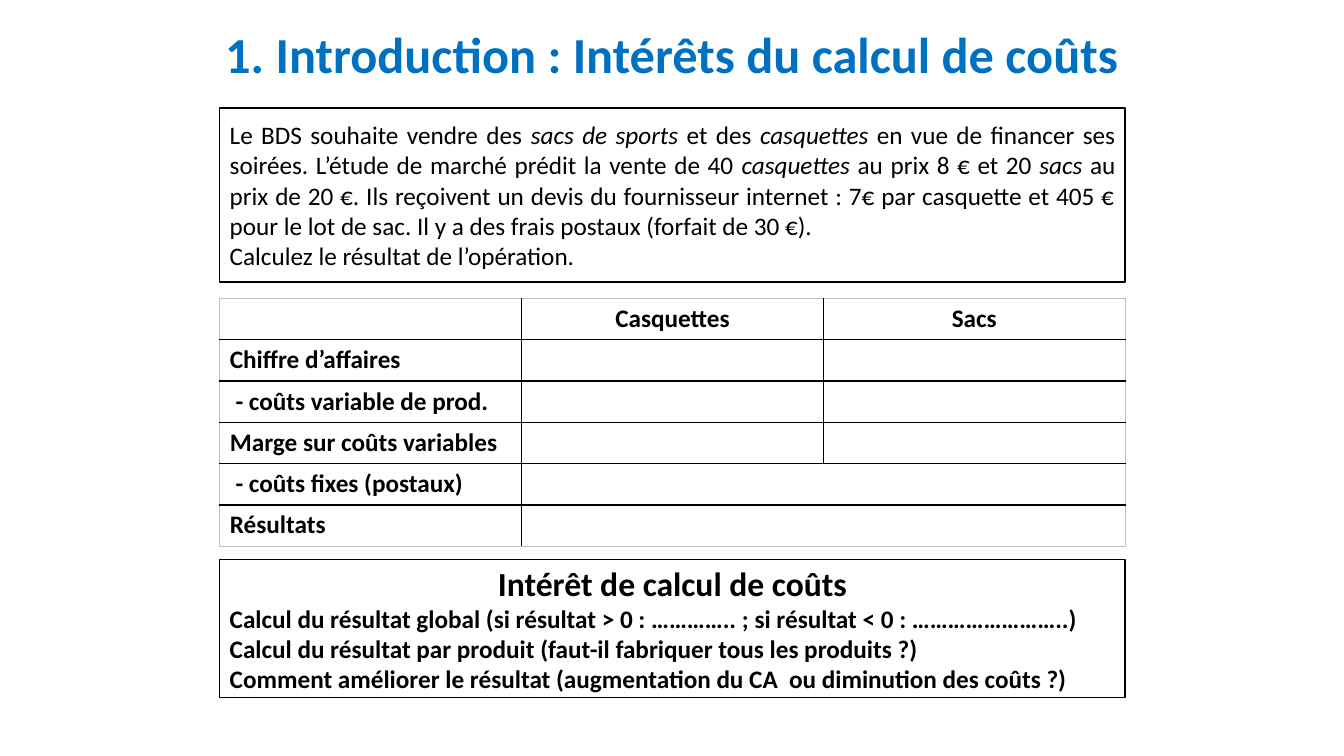
from lxml.etree import SubElement
from pptx import Presentation
from pptx.dml.color import RGBColor
from pptx.enum.shapes import MSO_SHAPE
from pptx.enum.text import MSO_ANCHOR, PP_ALIGN
from pptx.oxml.ns import qn
from pptx.util import Inches, Pt

BLACK = RGBColor(0, 0, 0)
WHITE = RGBColor(255, 255, 255)
BLUE = RGBColor(0, 0x70, 0xC0)
GREY = RGBColor(0xBF, 0xBF, 0xBF)
LEFT, WIDTH = Inches(2.18), Inches(8.98)
ROW_HEIGHT = Inches(0.41)


def write_spans(para, spans, size, bold=False, align=PP_ALIGN.LEFT, color=BLACK):
    para.alignment = align
    for position, words in enumerate(spans):
        span = para.add_run()
        span.text = words
        span.font.name = "Calibri"
        span.font.size = Pt(size)
        span.font.bold = bold
        span.font.italic = position % 2 == 1
        span.font.color.rgb = color


def add_border(cell, side, color, width):
    line = SubElement(cell._tc.get_or_add_tcPr(), qn(f"a:{side}"), w=str(Pt(width)))
    SubElement(SubElement(line, qn("a:solidFill")), qn("a:srgbClr"), val=str(color))


deck = Presentation()
deck.slide_width, deck.slide_height = Inches(13.33), Inches(7.5)
page = deck.slides.add_slide(deck.slide_layouts[6])

exercise = [
    (["Le BDS souhaite vendre des ", "sacs de sports ", "et des ", "casquettes ",
      "en vue de financer ses soirées. L’étude de marché prédit la vente de 40 ",
      "casquettes ", "au prix 8 € et 20 ", "sacs ",
      "au prix de 20 €. Ils reçoivent un devis du fournisseur internet : 7€ par casquette "
      "et 405 € pour le lot de sac. Il y a des frais postaux (forfait de 30 €). "],
     18, False, PP_ALIGN.JUSTIFY),
    (["Calculez le résultat de l’opération."], 18, False, PP_ALIGN.JUSTIFY),
]
interest = [(["Intérêt de calcul de coûts"], 24, True, PP_ALIGN.CENTER)] + [
    ([words], 18, True, PP_ALIGN.JUSTIFY)
    for words in (
        "Calcul du résultat global (si résultat > 0 : ………….. ; si résultat < 0 : ……………………..)",
        "Calcul du résultat par produit (faut-il fabriquer tous les produits ?)",
        "Comment améliorer le résultat (augmentation du CA  ou diminution des coûts ?) ",
    )
]

for top, height, paragraphs in ((1.07, 1.73, exercise), (5.55, 1.37, interest)):
    box = page.shapes.add_shape(MSO_SHAPE.RECTANGLE, LEFT, Inches(top), WIDTH, Inches(height))
    box.shadow.inherit = False
    box.fill.solid()
    box.fill.fore_color.rgb = WHITE
    box.line.color.rgb = BLACK
    box.line.width = Pt(1)
    frame = box.text_frame
    frame.word_wrap = True
    frame.vertical_anchor = MSO_ANCHOR.MIDDLE
    for index, (spans, size, bold, align) in enumerate(paragraphs):
        para = frame.add_paragraph() if index else frame.paragraphs[0]
        write_spans(para, spans, size, bold, align)

results = [
    ["", "Casquettes", "Sacs"],
    ["Chiffre d’affaires", "", ""],
    [" - coûts variable de prod.", "", ""],
    ["Marge sur coûts variables", "", ""],
    [" - coûts fixes (postaux)", "", ""],
    ["Résultats", "", ""],
]
rows, columns = len(results), len(results[0])
table = page.shapes.add_table(
    rows, columns, LEFT, Inches(2.96), WIDTH, ROW_HEIGHT * rows).table
table.first_row = table.horz_banding = False
for row in table.rows:
    row.height = ROW_HEIGHT
for row in (4, 5):
    table.cell(row, 1).merge(table.cell(row, 2))

for row, labels in enumerate(results):
    for column, label in enumerate(labels):
        cell = table.cell(row, column)
        edges = {
            "lnL": column == 0,
            "lnR": column + cell.span_width == columns or column == columns - 1,
            "lnT": row == 0,
            "lnB": row == rows - 1,
        }
        for side, outer in edges.items():
            add_border(cell, side, GREY if outer else BLACK, 0.5 if outer else 1)
        cell.fill.solid()
        cell.fill.fore_color.rgb = WHITE
        if label:
            align = PP_ALIGN.CENTER if row == 0 else PP_ALIGN.LEFT
            write_spans(cell.text_frame.paragraphs[0], [label], 18, True, align)

title = page.shapes.add_textbox(0, Inches(-0.42), deck.slide_width, Inches(1.25))
frame = title.text_frame
frame.word_wrap = True
frame.vertical_anchor = MSO_ANCHOR.BOTTOM
frame.margin_left = frame.margin_right = frame.margin_bottom = 0
write_spans(frame.paragraphs[0], ["1. Introduction : Intérêts du calcul de coûts"],
            36, True, PP_ALIGN.CENTER, BLUE)

deck.save("out.pptx")
